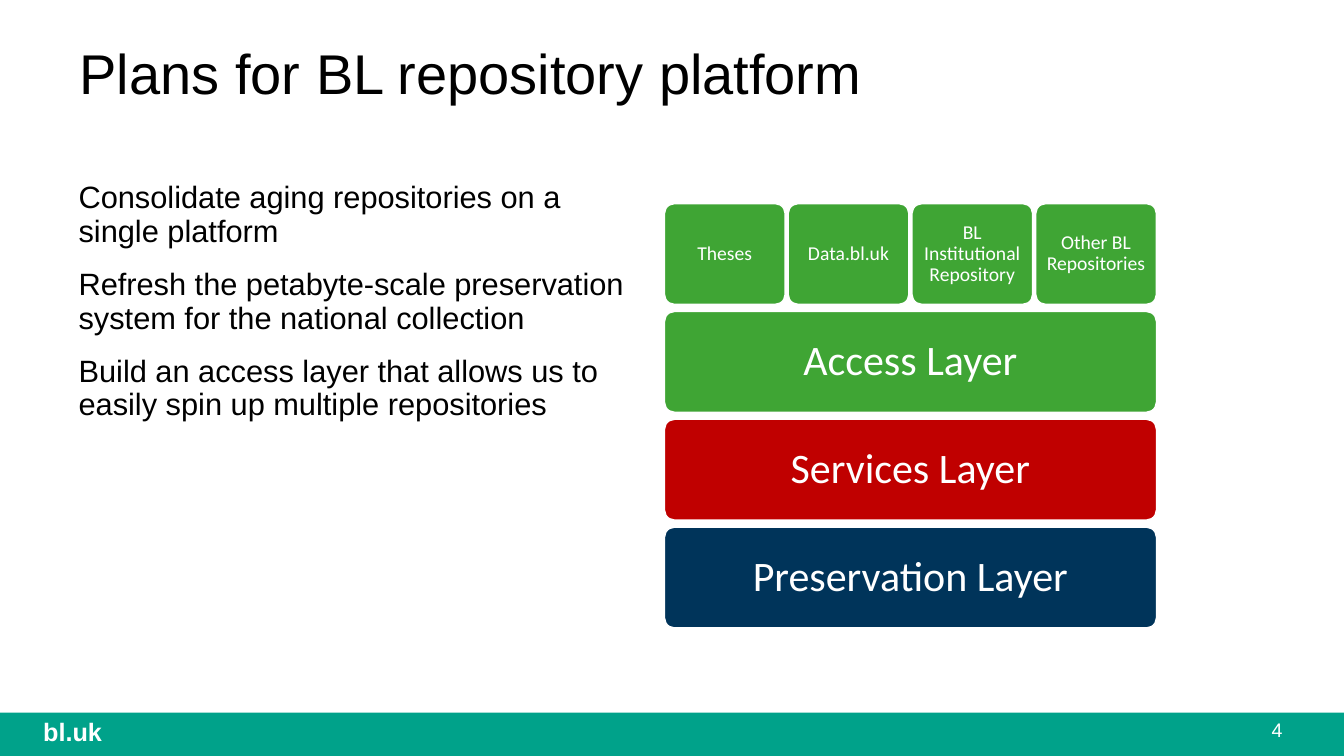
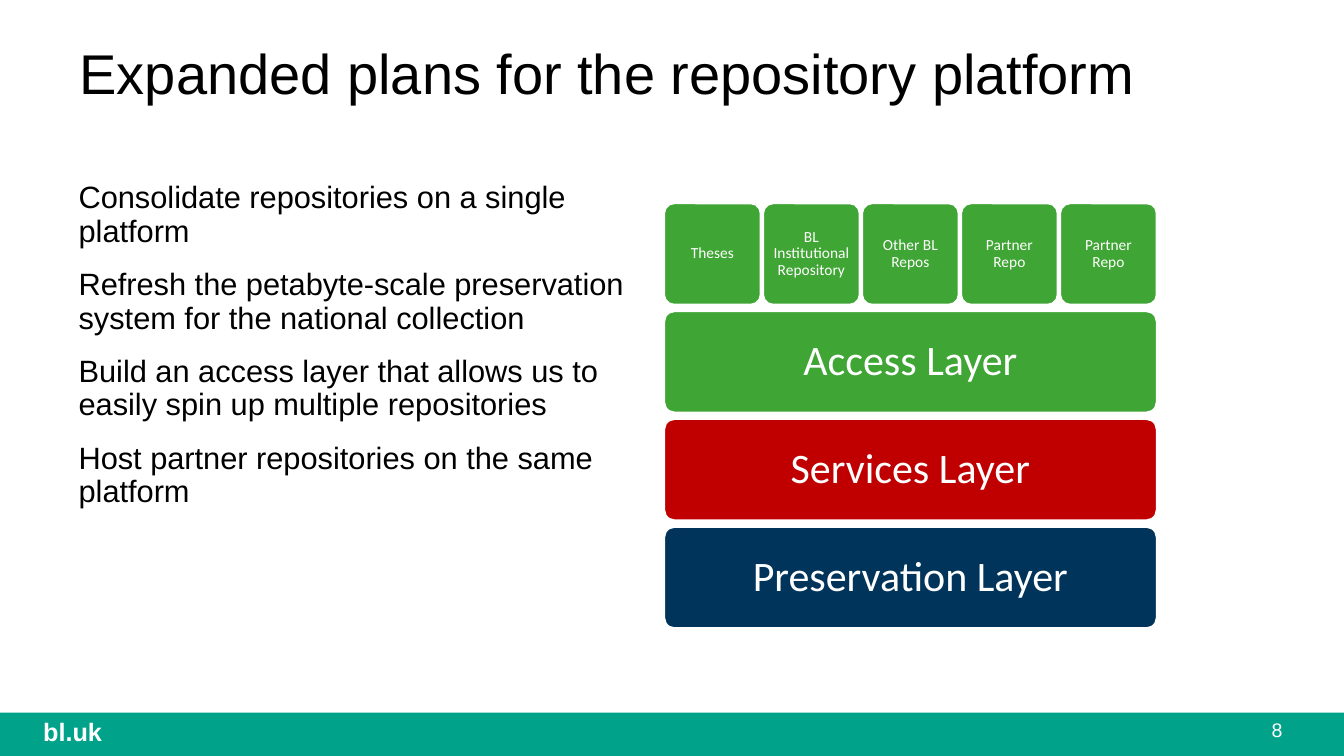
import pptx
import pptx.util
import pptx.dml.color
import pptx.enum.shapes
import pptx.enum.text

Inches, Pt = pptx.util.Inches, pptx.util.Pt
ALIGN = pptx.enum.text.PP_ALIGN
ANCHOR = pptx.enum.text.MSO_ANCHOR
SHAPE = pptx.enum.shapes.MSO_SHAPE

# Content
REFRESH = "Refresh the petabyte-scale preservation system for the national collection"
BUILD = "Build an access layer that allows us to easily spin up multiple repositories"
SLIDES = [
    {
        "number": "4",
        "title": "Plans for BL repository platform",
        "points": ["Consolidate aging repositories on a single platform", REFRESH, BUILD],
        "repositories": ["Theses", "Data.bl.uk", "BL Institutional Repository",
                         "Other BL Repositories"],
        "size": 14,
        "inset": 0.06,
    },
    {
        "number": "8",
        "title": "Expanded plans for the repository platform",
        "points": ["Consolidate repositories on a single platform", REFRESH, BUILD,
                   "Host partner repositories on the same platform"],
        "repositories": ["Theses", "BL Institutional Repository", "Other BL Repos",
                         "Partner Repo", "Partner Repo"],
        "size": 11,
        "inset": 0.05,
    },
]
LAYERS = [("Access Layer", "access"), ("Services Layer", "services"),
          ("Preservation Layer", "preservation")]
FOOTER = "bl.uk"

# Shared style
COLORS = {"text": "000000", "white": "FFFFFF", "band": "00A28A",
          "access": "3FA534", "services": "C00000", "preservation": "00345A"}
WIDTH, HEIGHT = 13.33, 7.5
BAND_HEIGHT = 0.43
BAND_TOP = HEIGHT - BAND_HEIGHT
TEXT_INSETS = (0.12, 0.06)
FOOTER_INSETS = (0.1, 0.05)

# Layer diagram grid
STACK_LEFT, STACK_TOP, STACK_WIDTH = 6.59, 2.02, 4.88
BOX_HEIGHT, ROW_STEP, COLUMN_GAP = 1, 1.07, 0.03


def color(name):
    return pptx.dml.color.RGBColor.from_string(COLORS[name])


def write(s, paragraphs, size, fill="white", font="Arial", bold=False, insets=TEXT_INSETS,
          align=ALIGN.LEFT, anchor=ANCHOR.TOP, wrap=True, spacing=0.9, before=0, after=0):
    tf = s.text_frame
    tf.word_wrap = wrap
    tf.vertical_anchor = anchor
    tf.margin_left = tf.margin_right = Inches(insets[0])
    tf.margin_top = tf.margin_bottom = Inches(insets[1])
    for i, text in enumerate(paragraphs):
        p = tf.add_paragraph() if i else tf.paragraphs[0]
        p.alignment = align
        p.line_spacing = spacing
        p.space_before = Pt(before if i else 0)
        p.space_after = Pt(after)
        r = p.add_run()
        r.text = text
        r.font.name, r.font.size, r.font.bold = font, Pt(size), bold
        r.font.color.rgb = color(fill)


def add_text(slide, box, paragraphs, size, **style):
    write(slide.shapes.add_textbox(*map(Inches, box)), paragraphs, size, **style)


def add_box(slide, kind, box, fill):
    s = slide.shapes.add_shape(kind, *map(Inches, box))
    s.shadow.inherit = False
    s.fill.solid()
    s.fill.fore_color.rgb = color(fill)
    s.line.fill.background()
    return s


def add_block(slide, box, text, fill, size, inset):
    s = add_box(slide, SHAPE.ROUNDED_RECTANGLE, box, fill)
    s.adjustments[0] = 0.1
    s.line.color.rgb = color("white")
    s.line.width = Pt(1)
    write(s, [text], size, font="Calibri", insets=(inset, inset),
          align=ALIGN.CENTER, anchor=ANCHOR.MIDDLE)


def add_footer(slide, number):
    add_box(slide, SHAPE.RECTANGLE, (0, BAND_TOP, WIDTH, BAND_HEIGHT), "band")
    add_text(slide, (12.26, BAND_TOP, 0.56, 0.34), [number], 14,
             insets=FOOTER_INSETS, align=ALIGN.RIGHT, spacing=1)
    add_text(slide, (0.33, 7.06, 0.79, 0.4), [FOOTER], 18, bold=True,
             insets=FOOTER_INSETS, wrap=False, spacing=1)


def add_stack(slide, repositories, size, inset):
    count = len(repositories)
    width = (STACK_WIDTH - (count - 1) * COLUMN_GAP) / count
    for column, name in enumerate(repositories):
        left = STACK_LEFT + column * (width + COLUMN_GAP)
        add_block(slide, (left, STACK_TOP, width, BOX_HEIGHT), name, "access", size, inset)
    for row, (name, fill) in enumerate(LAYERS, start=1):
        top = STACK_TOP + row * ROW_STEP
        add_block(slide, (STACK_LEFT, top, STACK_WIDTH, BOX_HEIGHT), name, fill, 30, 0.12)


def main():
    prs = pptx.Presentation()
    prs.slide_width, prs.slide_height = Inches(WIDTH), Inches(HEIGHT)
    for content in SLIDES:
        slide = prs.slides.add_slide(prs.slide_layouts[6])
        add_footer(slide, content["number"])
        add_text(slide, (0.67, 0.4, 11.28, 1.25), [content["title"]], 40, fill="text")
        add_text(slide, (0.66, 1.75, 5.67, 4.93), content["points"], 22, fill="text",
                 before=10, after=4.5)
        add_stack(slide, content["repositories"], content["size"], content["inset"])
    prs.save("out.pptx")


if __name__ == "__main__":
    main()
